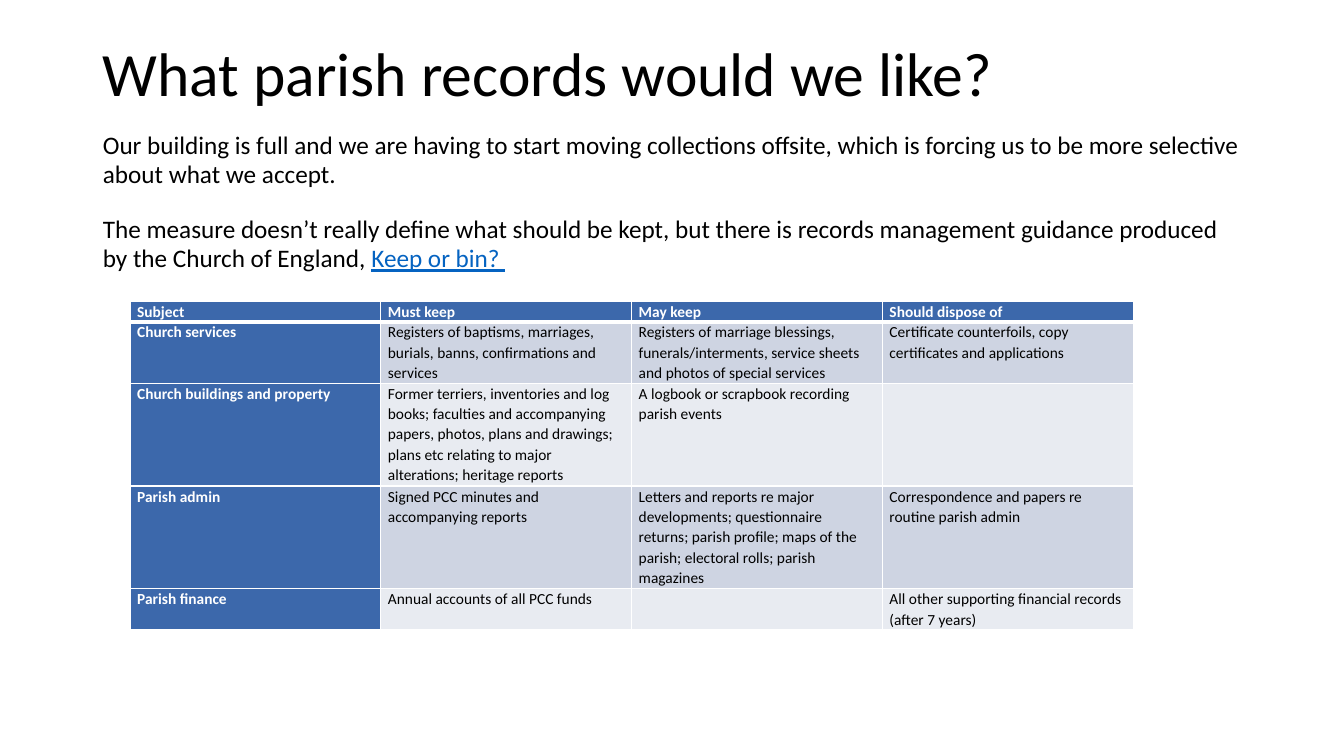
"""Build a slide on which parish records to keep, with a guidance table."""
import dataclasses
import typing

import lxml.etree
import pptx
import pptx.dml.color
import pptx.enum.text
import pptx.oxml
import pptx.oxml.ns
import pptx.util

Inches = pptx.util.Inches
Pt = pptx.util.Pt

FONT = "Calibri"
COLORS = {
    "black": "000000",
    "white": "FFFFFF",
    "link": "0563C1",
    "head": "3C68AB",
    "odd": "CED4E2",
    "even": "E8EBF1",
}


@dataclasses.dataclass(frozen=True)
class Run:
    """A piece of text and its look."""
    text: str
    size: float
    color: str = "black"
    bold: bool = False
    underline: bool = False


@dataclasses.dataclass(frozen=True)
class Row:
    """A table row with its height in inches."""
    height: float
    texts: tuple[str, str, str, str]


BODY = (
    (Run("Our building is full and we are having to start moving collections offsite, "
         "which is forcing us to be more selective about what we accept.", 18),),
    (Run("The measure doesn’t really define what should be kept, but there is records "
         "management guidance produced by the Church of England, ", 18),
     Run("Keep or bin? ", 18, "link", underline=True)),
)

ROWS = (
    Row(0.2, ("Subject", "Must keep", "May keep", "Should dispose of")),
    Row(0.61, (
        "Church services",
        "Registers of baptisms, marriages, burials, banns, confirmations and services",
        "Registers of marriage blessings, funerals/interments, service sheets and photos "
        "of special services",
        "Certificate counterfoils, copy certificates and applications")),
    Row(1.02, (
        "Church buildings and property",
        "Former terriers, inventories and log books; faculties and accompanying papers, "
        "photos, plans and drawings; plans etc relating to major alterations; heritage reports",
        "A logbook or scrapbook recording parish events",
        "")),
    Row(1.02, (
        "Parish admin",
        "Signed PCC minutes and accompanying reports",
        "Letters and reports re major developments; questionnaire returns; parish profile; "
        "maps of the parish; electoral rolls; parish magazines",
        "Correspondence and papers re routine parish admin")),
    Row(0.4, (
        "Parish finance",
        "Annual accounts of all PCC funds",
        "",
        "All other supporting financial records (after 7 years)")),
)


def rgb(name: str) -> pptx.dml.color.RGBColor:
    """Look up a colour by name."""
    return pptx.dml.color.RGBColor.from_string(COLORS[name])


def add_runs(p: typing.Any, runs: typing.Iterable[Run]) -> None:
    """Append formatted runs to a paragraph."""
    for run in runs:
        r = p.add_run()
        r.text = run.text
        r.font.name = FONT
        r.font.size = Pt(run.size)
        r.font.bold = run.bold
        r.font.underline = run.underline
        r.font.color.rgb = rgb(run.color)


def place(sp: typing.Any, left: float, top: float, width: float, height: float) -> typing.Any:
    """Move a placeholder and return its text frame."""
    sp.left, sp.top = Inches(left), Inches(top)
    sp.width, sp.height = Inches(width), Inches(height)
    tf = sp.text_frame
    tf.word_wrap = True
    tf.auto_size = pptx.enum.text.MSO_AUTO_SIZE.NONE
    return tf


def fill_title(sp: typing.Any) -> None:
    """Write the slide title."""
    tf = place(sp, 0.92, 0.03, 11.5, 1.45)
    tf.vertical_anchor = pptx.enum.text.MSO_ANCHOR.MIDDLE
    p = tf.paragraphs[0]
    p.alignment = pptx.enum.text.PP_ALIGN.LEFT
    p.line_spacing = 0.9
    add_runs(p, [Run("What parish records would we like?", 44)])


def fill_body(sp: typing.Any) -> None:
    """Write the body paragraphs without bullets."""
    tf = place(sp, 0.92, 1.25, 11.5, 1.74)
    tf.vertical_anchor = pptx.enum.text.MSO_ANCHOR.TOP
    for i, runs in enumerate(BODY):
        p = tf.add_paragraph() if i else tf.paragraphs[0]
        pPr = p._p.get_or_add_pPr()
        pPr.set("marL", "0")
        pPr.set("indent", "0")
        lxml.etree.SubElement(pPr, pptx.oxml.ns.qn("a:buNone"))
        p.line_spacing = 0.97
        p.space_before = Pt(10 if i else 0)
        p.space_after = Pt(8)
        add_runs(p, runs)


def set_border(cell: typing.Any, side: str, width: float) -> None:
    """Draw one white cell border ahead of the cell's fill."""
    tcPr = cell._tc.get_or_add_tcPr()
    ln = pptx.oxml.parse_xml(
        f'<a:ln{side} {pptx.oxml.ns.nsdecls("a")} w="{Pt(width)}"><a:solidFill>'
        f'<a:srgbClr val="{COLORS["white"]}"/></a:solidFill></a:ln{side}>')
    tcPr.insert("LRTB".index(side), ln)


def fill_cell(cell: typing.Any, text: str, row: int, col: int) -> None:
    """Write and colour one table cell."""
    head = row == 0 or col == 0
    cell.margin_left = cell.margin_right = Inches(0.07)
    cell.margin_top = cell.margin_bottom = 0
    cell.fill.solid()
    cell.fill.fore_color.rgb = rgb("head" if head else "odd" if row % 2 else "even")
    for side in "LRTB":
        set_border(cell, side, 3 if (row, side) in ((0, "B"), (1, "T")) else 1)
    if text:
        p = cell.text_frame.paragraphs[0]
        p.line_spacing = 1.07
        p.space_after = Pt(8)
        add_runs(p, [Run(text, 11, "white" if head else "black", bold=head)])


def add_guidance(s: typing.Any) -> None:
    """Add the table of records to keep."""
    cols = len(ROWS[0].texts)
    height = sum(row.height for row in ROWS)
    table = s.shapes.add_table(len(ROWS), cols, Inches(1.29), Inches(2.99),
                               Inches(9.95), Inches(height)).table
    table.first_col = True
    for i, row in enumerate(ROWS):
        table.rows[i].height = Inches(row.height)
        for j, text in enumerate(row.texts):
            fill_cell(table.cell(i, j), text, i, j)


def main() -> None:
    """Build and save the deck."""
    prs = pptx.Presentation()
    prs.slide_width, prs.slide_height = Inches(13.33), Inches(7.5)
    s = prs.slides.add_slide(prs.slide_layouts[1])
    fill_title(s.shapes.title)
    fill_body(s.placeholders[1])
    add_guidance(s)
    prs.save("out.pptx")


if __name__ == "__main__":
    main()
